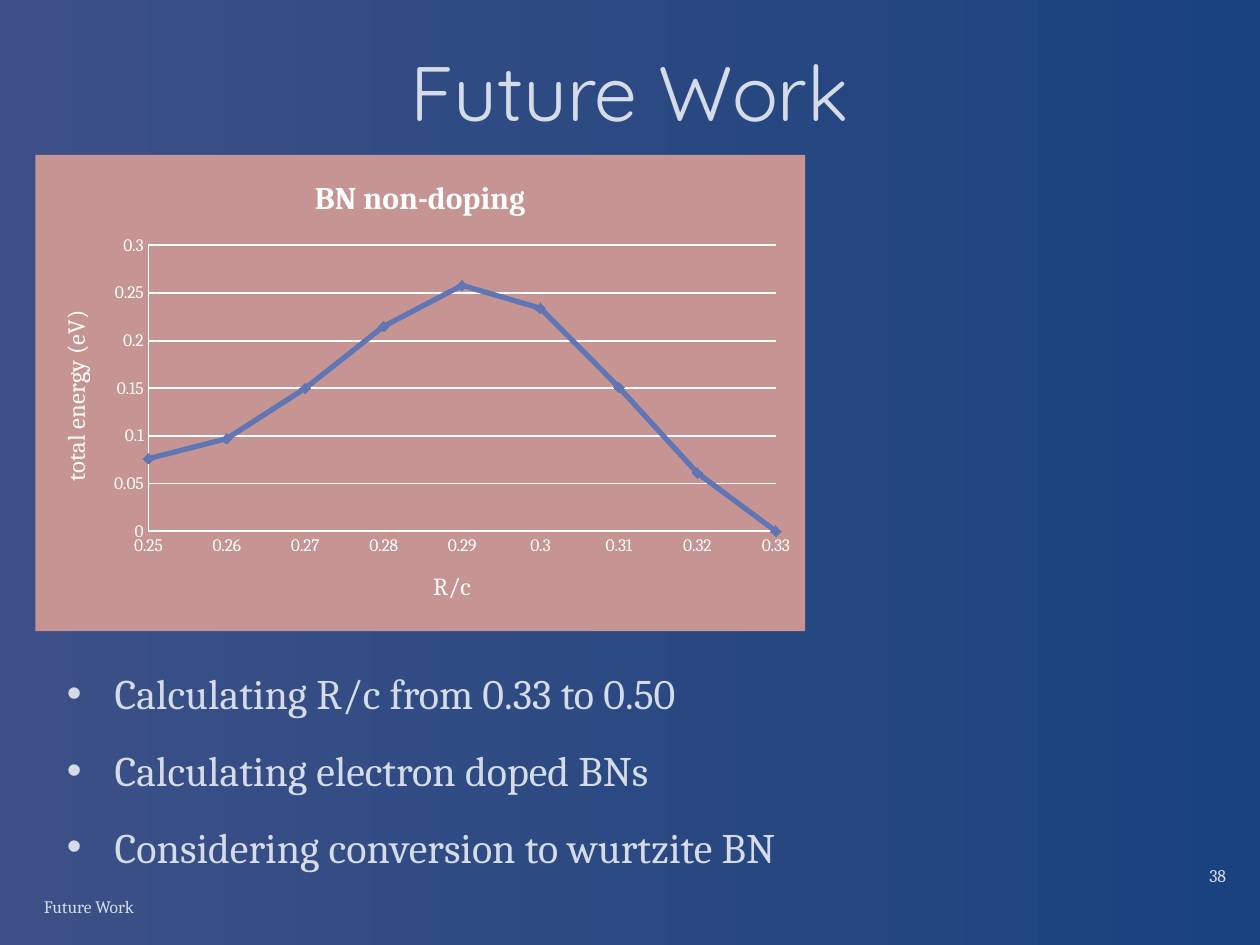
from lxml import etree
from pptx import Presentation
from pptx.chart.data import XyChartData
from pptx.dml.color import RGBColor
from pptx.enum.chart import XL_CHART_TYPE, XL_MARKER_STYLE, XL_TICK_MARK
from pptx.enum.text import MSO_ANCHOR, MSO_AUTO_SIZE, PP_ALIGN
from pptx.oxml import parse_xml
from pptx.oxml.ns import nsdecls, qn
from pptx.util import Inches, Pt

SMOOTH = XL_CHART_TYPE.XY_SCATTER_SMOOTH
DIAMOND = XL_MARKER_STYLE.DIAMOND
NO_TICK = XL_TICK_MARK.NONE
BOTTOM, TOP = MSO_ANCHOR.BOTTOM, MSO_ANCHOR.TOP
LEFT, CENTER, RIGHT = PP_ALIGN.LEFT, PP_ALIGN.CENTER, PP_ALIGN.RIGHT
NO_FIT = MSO_AUTO_SIZE.NONE
WHITE, PALE, ROSE, BLUE = "FFFFFF", "D5DBE7", "C79494", "6076B4"


def color(text):
    return RGBColor.from_string(text)


class Deck:
    """Holds the style and the current slide."""

    def __init__(self):
        self.prs = Presentation()
        self.prs.slide_width, self.prs.slide_height = Inches(10), Inches(7.5)
        self.face, self.head = "Cambria", "Quicksand"
        self.slide = self.prs.slides.add_slide(self.prs.slide_layouts[1])

    def back(self, start, end):
        fill = self.slide.background.fill
        fill.gradient()
        fill.gradient_angle = 0
        for stop, tone, place in zip(fill.gradient_stops, (start, end), (0, 1)):
            stop.color.rgb = color(tone)
            stop.position = place

    def place(self, shape, box):
        shape.left, shape.top, shape.width, shape.height = map(Inches, box)

    def font(self, font, size, tone, face=None, bold=False):
        font.name, font.size, font.bold = face or self.face, Pt(size), bold
        font.color.rgb = color(tone)

    def text(self, shape, words, size, align, anchor, face=None):
        frame = shape.text_frame
        frame.word_wrap, frame.auto_size = True, NO_FIT
        frame.vertical_anchor = anchor
        frame.text = words
        for para in frame.paragraphs:
            para.alignment = align
            self.font(para.font, size, PALE, face)

    def title(self, text, box):
        shape = self.slide.shapes.title
        self.place(shape, box)
        self.text(shape, text, 44, CENTER, BOTTOM, self.head)

    def label(self, text, box, size, align):
        shape = self.slide.shapes.add_textbox(*map(Inches, box))
        self.text(shape, text, size, align, BOTTOM)

    def bullets(self, items, box):
        shape = self.slide.placeholders[1]
        self.place(shape, box)
        self.text(shape, "\n".join(items), 24, LEFT, TOP)
        for i, para in enumerate(shape.text_frame.paragraphs):
            para.space_before = Pt(15 if i else 0)
            props = para._p.get_or_add_pPr()
            props.set("marL", str(Inches(0.38)))
            props.set("indent", str(-Inches(0.38)))
            mark = parse_xml(f'<a:buChar {nsdecls("a")} char="•"/>')
            props.find(qn("a:defRPr")).addprevious(mark)

    def axis(self, axis, title, low, high, step):
        axis.minimum_scale, axis.maximum_scale = low, high
        axis.major_unit = step
        axis.major_tick_mark = axis.minor_tick_mark = NO_TICK
        axis.tick_labels.number_format = "General"
        axis.tick_labels.number_format_is_linked = False
        axis.format.line.color.rgb = color(WHITE)
        axis.format.line.width = Pt(1)
        self.caption(axis.axis_title, title, 14)

    def caption(self, holder, text, size, bold=False):
        holder.text_frame.text = text
        para = holder.text_frame.paragraphs[0]
        self.font(para.font, size, WHITE, bold=bold)

    def curve(self, name, points, box):
        data = XyChartData()
        line = data.add_series(name)
        for x, y in points:
            line.add_data_point(x, y)
        frame = self.slide.shapes.add_chart(SMOOTH, *map(Inches, box), data)
        chart = frame.chart
        self.font(chart.font, 10, WHITE)
        chart.has_legend = False
        self.caption(chart.chart_title, name, 18, True)
        chart.chart_title.include_in_layout = False
        self.axis(chart.category_axis, "R/c", 0.25, 0.33, 0.01)
        self.axis(chart.value_axis, "total energy (eV)", 0, 0.3, 0.05)
        chart.category_axis.has_major_gridlines = False
        chart.value_axis.has_major_gridlines = True
        grid = chart.value_axis.major_gridlines.format.line
        grid.color.rgb, grid.width = color(WHITE), Pt(1)
        plot = chart.plots[0]
        plot.vary_by_categories = False
        row = plot.series[0]
        row.smooth = True
        row.format.line.color.rgb, row.format.line.width = color(BLUE), Pt(3)
        row.marker.style, row.marker.size = DIAMOND, 6
        row.marker.format.fill.solid()
        row.marker.format.fill.fore_color.rgb = color(BLUE)
        row.marker.format.line.color.rgb = color(BLUE)
        self.panel(chart, ROSE)
        self.layout(chart, {"x": 0.147, "y": 0.19, "w": 0.815, "h": 0.6})

    def panel(self, chart, tone):
        fill = parse_xml(
            f'<c:spPr {nsdecls("c", "a")}><a:solidFill><a:srgbClr val="{tone}"/>'
            "</a:solidFill><a:ln><a:noFill/></a:ln></c:spPr>")
        chart._chartSpace.find(qn("c:chart")).addnext(fill)

    def layout(self, chart, parts):
        area = chart._chartSpace.find(".//" + qn("c:plotArea"))
        for old in area.findall(qn("c:layout")):
            area.remove(old)
        layout = parse_xml(f'<c:layout {nsdecls("c")}/>')
        manual = etree.SubElement(layout, qn("c:manualLayout"))
        modes = {"layoutTarget": "inner", "xMode": "edge", "yMode": "edge"}
        for tag, val in {**modes, **parts}.items():
            etree.SubElement(manual, qn("c:" + tag)).set("val", str(val))
        area.insert(0, layout)


def main():
    deck = Deck()
    deck.back("3C5087", "1A427E")
    deck.title("Future Work", (0, 0.13, 10, 1.01))
    energy = [0.076, 0.097, 0.15, 0.215, 0.258, 0.234, 0.151, 0.061, 0]
    points = [(round(0.25 + i / 100, 2), y) for i, y in enumerate(energy)]
    deck.curve("BN non-doping", points, (0.28, 1.23, 6.11, 3.78))
    deck.bullets(["Calculating R/c from 0.33 to 0.50",
                  "Calculating electron doped BNs",
                  "Considering conversion to wurtzite BN"],
                 (0.43, 5.25, 9.57, 1.97))
    deck.label("38", (9.25, 6.83, 0.58, 0.25), 10.2, RIGHT)
    deck.label("Future Work", (0.25, 7.08, 3.17, 0.25), 10, LEFT)
    deck.prs.save("out.pptx")


if __name__ == "__main__":
    main()
